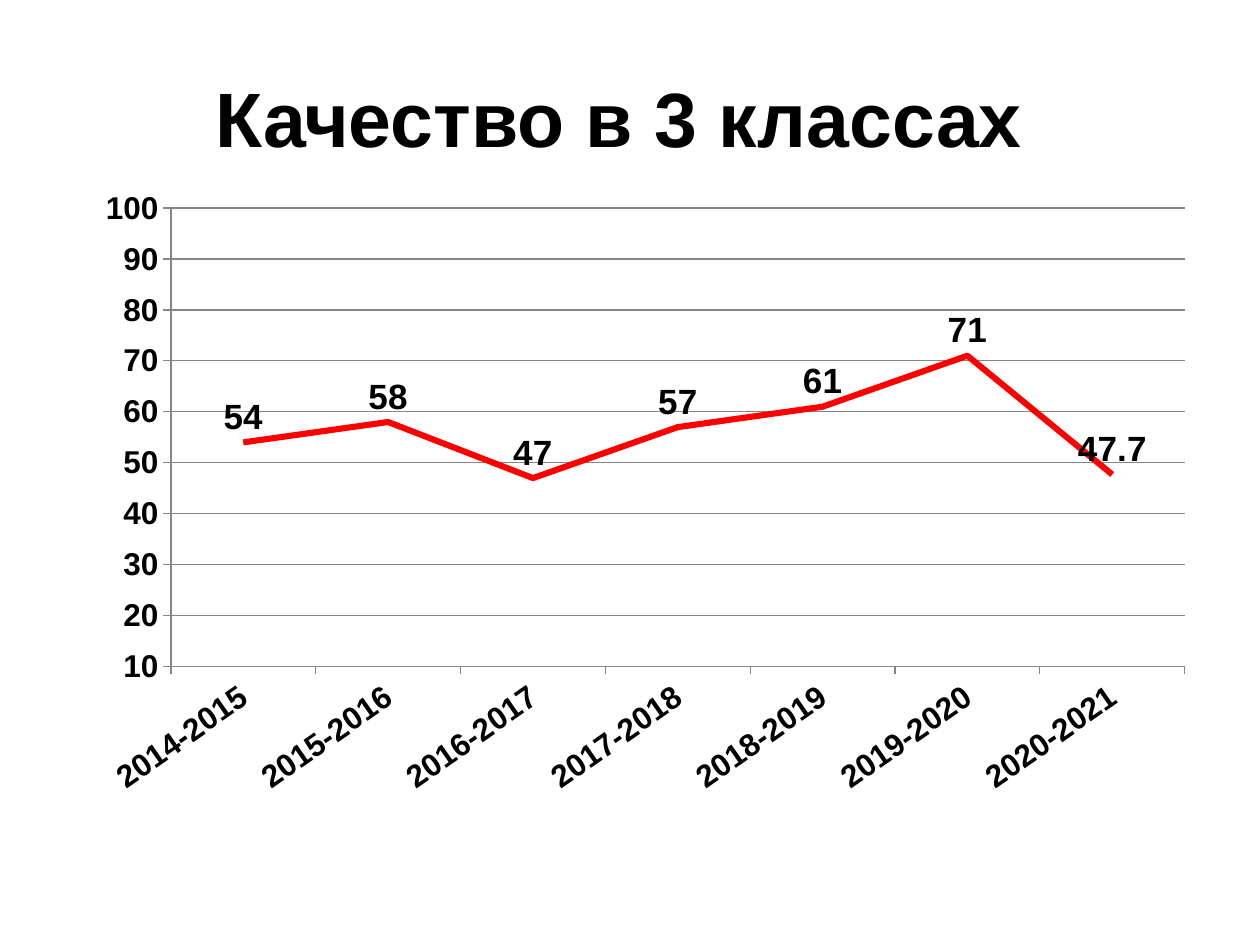
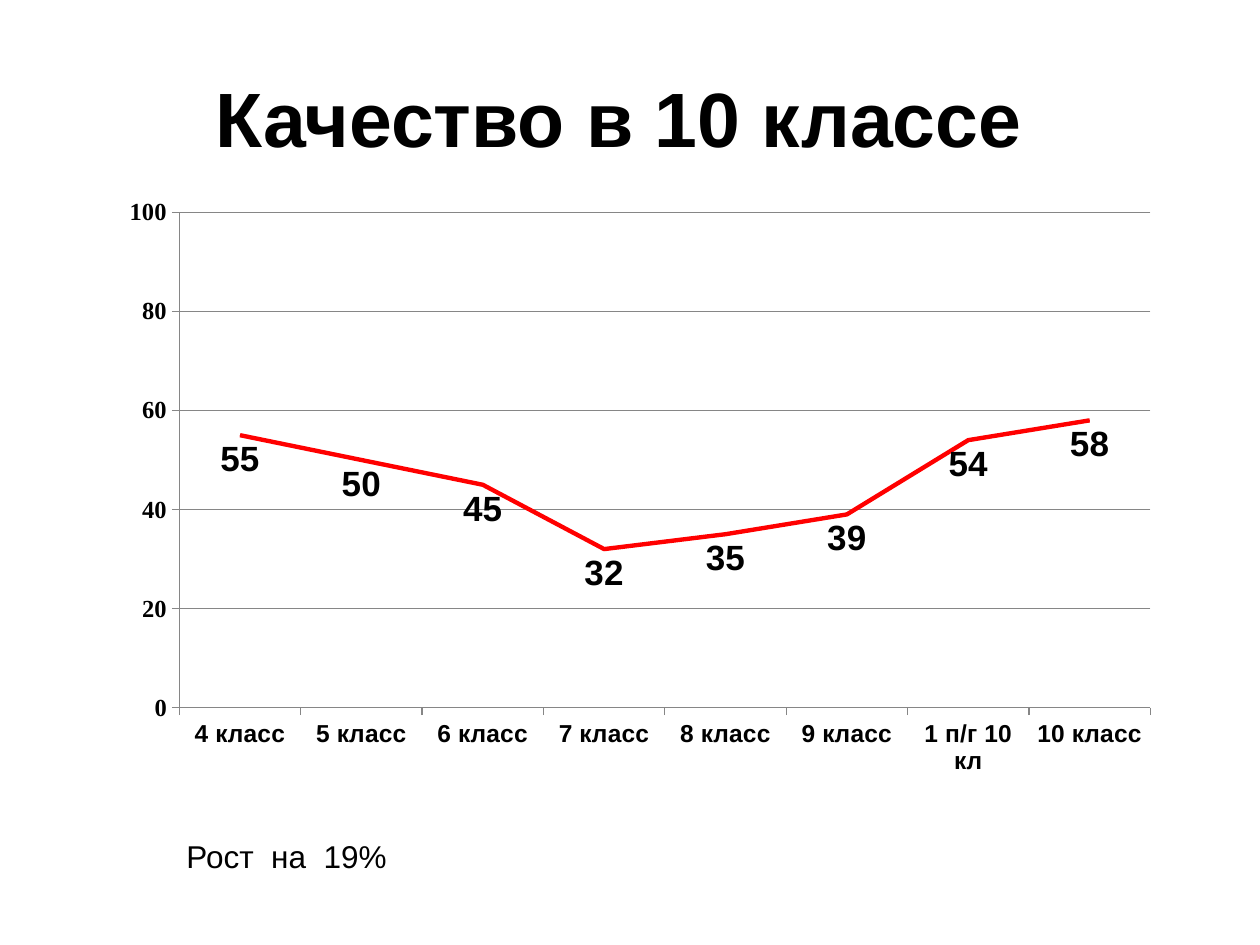
from lxml.etree import SubElement
from pptx import Presentation
from pptx.chart.data import CategoryChartData
from pptx.dml.color import RGBColor
from pptx.enum.chart import XL_CHART_TYPE, XL_LABEL_POSITION, XL_TICK_MARK
from pptx.enum.text import MSO_ANCHOR, PP_ALIGN
from pptx.oxml.ns import qn
from pptx.util import Cm, Pt

# Shared look
FONT, INK, RED, GRAY = "Arial", "000000", "FF0000", "868686"
TITLE_BOX = (1.27, 0.76, 22.86, 3.18)

# Content: boxes are left, top, width, height in cm; plot is in parts of the chart
SLIDES = [
    dict(
        title="Качество в 3 классах ",
        box=(1.7, 3.61, 22.66, 12.67), plot=(0.077, 0.046, 0.902, 0.73),
        cats=[f"{year}-{year + 1}" for year in range(2014, 2021)],
        vals=[54, 58, 47, 57, 61, 71, 47.7],
        lines=[3.5], low=10, step=10, size=18, font=FONT, turn=-35,
        label=XL_LABEL_POSITION.ABOVE,
    ),
    dict(
        title="Качество в 10 классе ",
        box=(2.18, 3.76, 21.44, 12.12), plot=(0.067, 0.043, 0.913, 0.824),
        cats=[f"{grade} класс" for grade in range(4, 10)] + ["1 п/г 10 кл", "10 класс"],
        vals=[55, 50, 45, 32, 35, 39, 54, 58],
        lines=[2.5, 0.75, 0.75], low=0, step=20, size=14, font="Times New Roman", turn=0,
        label=XL_LABEL_POSITION.BELOW,
        note="Рост  на  19%", spot=(3.51, 16.74, 18.59, 1.02),
    ),
]


def color(code):
    return RGBColor.from_string(code)


def style(font, size, name=FONT, bold=True):
    font.size, font.name, font.bold = Pt(size), name, bold
    font.color.rgb = color(INK)


def stroke(line, code, width):
    line.color.rgb = color(code)
    line.width = Pt(width)


def add_text(slide, text, box, size, bold=False, align=PP_ALIGN.LEFT, anchor=MSO_ANCHOR.TOP):
    frame = slide.shapes.add_textbox(*map(Cm, box)).text_frame
    frame.word_wrap = True
    frame.vertical_anchor = anchor
    para = frame.paragraphs[0]
    para.alignment = align
    run = para.add_run()
    run.text = text
    style(run.font, size, bold=bold)


def place_plot(chart, parts):
    """Fix the inner plot area at x, y, w, h."""
    area = chart._chartSpace.chart.plotArea
    for old in area.findall(qn("c:layout")):
        area.remove(old)
    layout = SubElement(area, qn("c:layout"))
    area.insert(0, layout)
    manual = SubElement(layout, qn("c:manualLayout"))
    rules = [("layoutTarget", "inner"), ("xMode", "edge"), ("yMode", "edge")]
    for tag, val in rules + list(zip("xywh", parts)):
        SubElement(manual, qn("c:" + tag)).set("val", str(val))


def add_graph(slide, info):
    data = CategoryChartData()
    data.categories = info["cats"]
    for num in range(len(info["lines"])):
        data.add_series(f"Series {num + 1}", info["vals"])
    chart = slide.shapes.add_chart(XL_CHART_TYPE.LINE, *map(Cm, info["box"]), data).chart
    chart.has_legend = chart.has_title = False
    style(chart.font, 18, bold=False)
    place_plot(chart, info["plot"])

    # Axes
    cat, val = chart.category_axis, chart.value_axis
    for axis, font in ((cat, FONT), (val, info["font"])):
        axis.major_tick_mark = XL_TICK_MARK.OUTSIDE
        axis.minor_tick_mark = XL_TICK_MARK.NONE
        style(axis.tick_labels.font, info["size"], font)
        stroke(axis.format.line, GRAY, 0.75)
    val.minimum_scale, val.maximum_scale, val.major_unit = info["low"], 100, info["step"]
    val.has_major_gridlines = True
    stroke(val.major_gridlines.format.line, GRAY, 0.75)
    if info["turn"]:
        body = cat._element.find(qn("c:txPr")).find(qn("a:bodyPr"))
        body.set("rot", str(info["turn"] * 60000))

    # Lines, with values on the first one
    for line, width in zip(chart.plots[0].series, info["lines"]):
        line.smooth = False
        stroke(line.format.line, RED, width)
    labels = chart.plots[0].series[0].data_labels
    labels.show_value = True
    labels.position = info["label"]
    style(labels.font, 20)


def main():
    deck = Presentation()
    deck.slide_width, deck.slide_height = Cm(25.4), Cm(19.05)
    for info in SLIDES:
        slide = deck.slides.add_slide(deck.slide_layouts[6])
        add_text(slide, info["title"], TITLE_BOX, 44, bold=True,
                 align=PP_ALIGN.CENTER, anchor=MSO_ANCHOR.MIDDLE)
        add_graph(slide, info)
        if "note" in info:
            add_text(slide, info["note"], info["spot"], 18)
    deck.save("out.pptx")


if __name__ == "__main__":
    main()
